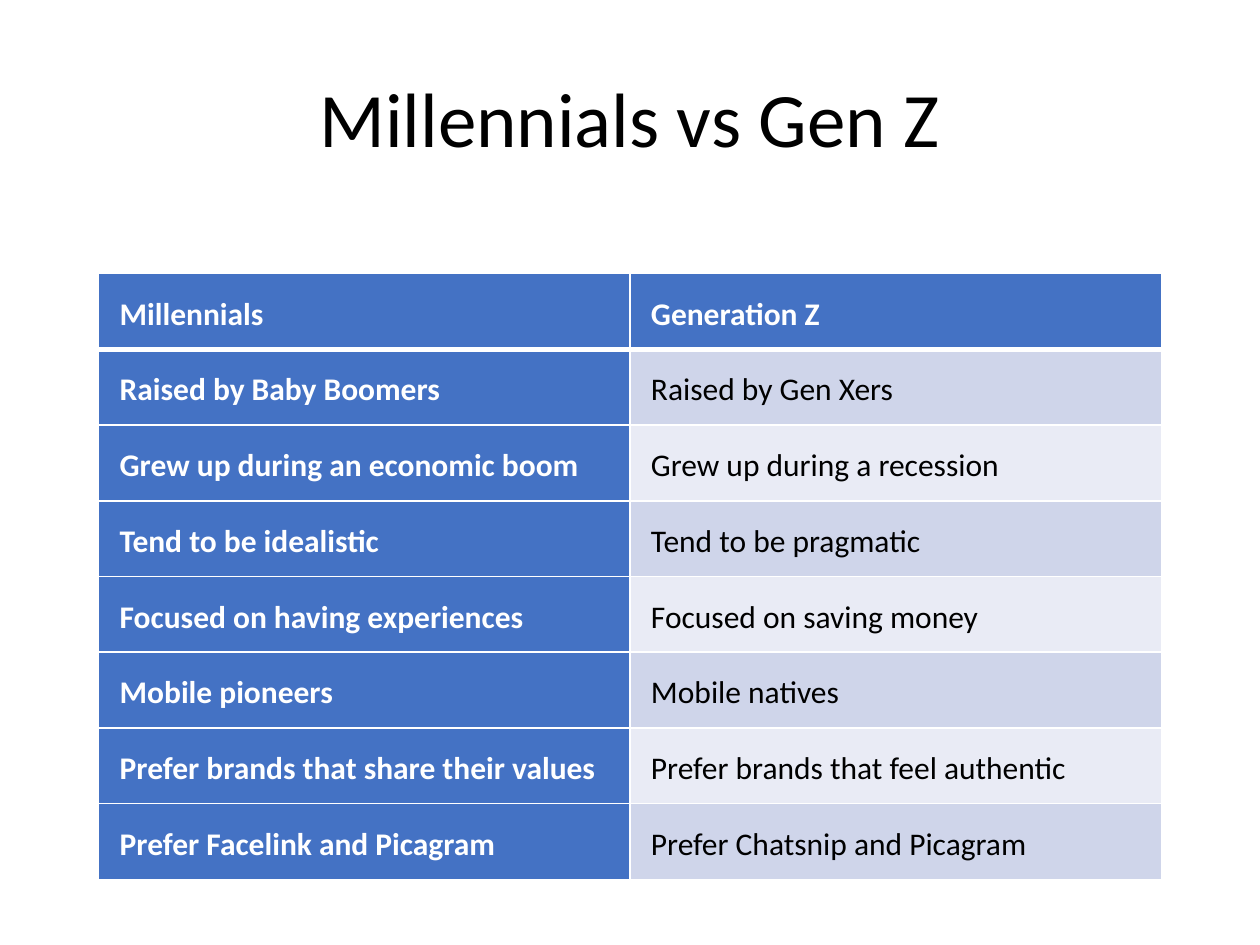
from lxml.etree import SubElement
from pptx import Presentation
from pptx.dml.color import RGBColor
from pptx.enum.text import MSO_ANCHOR, PP_ALIGN
from pptx.oxml.ns import qn
from pptx.util import Pt

COLORS = {
    "black": "000000",
    "white": "FFFFFF",
    "header": "4472C4",
    "band_dark": "CFD5EA",
    "band_light": "E9EBF5",
}
FONT = "Calibri"
COLUMN_WIDTH = 303.6
ROW_HEIGHT = 39.6

ROWS = [
    ("Millennials", "Generation Z"),
    ("Raised by Baby Boomers", "Raised by Gen Xers"),
    ("Grew up during an economic boom", "Grew up during a recession"),
    ("Tend to be idealistic", "Tend to be pragmatic"),
    ("Focused on having experiences", "Focused on saving money"),
    ("Mobile pioneers", "Mobile natives"),
    ("Prefer brands that share their values", "Prefer brands that feel authentic"),
    ("Prefer Facelink and Picagram", "Prefer Chatsnip and Picagram"),
]


def color(name):
    return RGBColor.from_string(COLORS[name])


def add_run(paragraph, text, size, color_name, bold=False):
    run = paragraph.add_run()
    run.text = text
    run.font.name = FONT
    run.font.size = Pt(size)
    run.font.bold = bold
    run.font.color.rgb = color(color_name)


def add_title(slide, text):
    title = slide.shapes.title
    title.left, title.top = Pt(78), Pt(21.6)
    title.width, title.height = Pt(564), Pt(90)
    frame = title.text_frame
    frame.word_wrap = True
    frame.vertical_anchor = MSO_ANCHOR.MIDDLE
    paragraph = frame.paragraphs[0]
    paragraph.alignment = PP_ALIGN.CENTER
    add_run(paragraph, text, 44, "black")


def set_borders(cell, bottom_width, top_width):
    """Draw white cell borders; they must precede the fill in tcPr."""
    properties = cell._tc.get_or_add_tcPr()
    widths = {"a:lnL": 1, "a:lnR": 1, "a:lnT": top_width, "a:lnB": bottom_width}
    for tag, width in widths.items():
        line = SubElement(properties, qn(tag), w=str(Pt(width)))
        fill = SubElement(line, qn("a:solidFill"))
        SubElement(fill, qn("a:srgbClr"), val=COLORS["white"])


def format_cell(cell, text, row, column):
    is_header = row == 0 or column == 0
    set_borders(cell, 3 if row == 0 else 1, 3 if row == 1 else 1)

    # Header row and first column are solid, the rest is banded
    band = "band_dark" if row % 2 else "band_light"
    cell.fill.solid()
    cell.fill.fore_color.rgb = color("header" if is_header else band)

    cell.margin_left = cell.margin_right = Pt(12)
    cell.margin_top = cell.margin_bottom = Pt(9)
    cell.vertical_anchor = MSO_ANCHOR.MIDDLE
    paragraph = cell.text_frame.paragraphs[0]
    paragraph.line_spacing = 1.15
    add_run(paragraph, text, 18, "white" if is_header else "black", is_header)


def add_comparison_table(slide, rows):
    column_count = len(rows[0])
    table = slide.shapes.add_table(
        len(rows), column_count, Pt(56.4), Pt(156.4),
        Pt(COLUMN_WIDTH * column_count), Pt(ROW_HEIGHT * len(rows)),
    ).table
    table.first_col = True
    for column in table.columns:
        column.width = Pt(COLUMN_WIDTH)
    for row_index, texts in enumerate(rows):
        table.rows[row_index].height = Pt(ROW_HEIGHT)
        for column_index, text in enumerate(texts):
            cell = table.cell(row_index, column_index)
            format_cell(cell, text, row_index, column_index)


def main():
    presentation = Presentation()
    presentation.slide_width, presentation.slide_height = Pt(720), Pt(540)
    # Title Only layout
    slide = presentation.slides.add_slide(presentation.slide_layouts[5])
    add_title(slide, "Millennials vs Gen Z")
    add_comparison_table(slide, ROWS)
    presentation.save("out.pptx")


if __name__ == "__main__":
    main()
